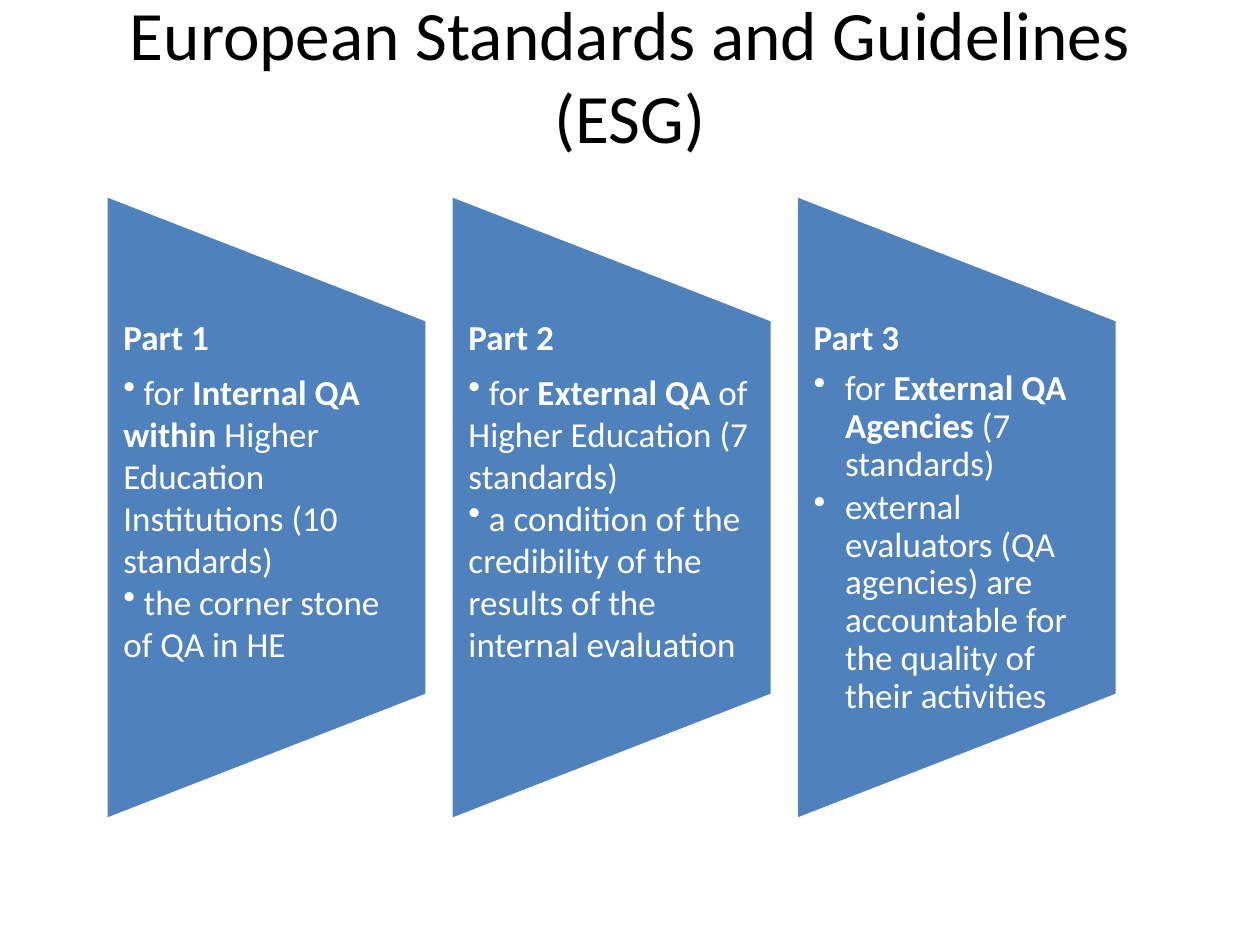
import dataclasses

import lxml.etree
import pptx
import pptx.dml.color
import pptx.enum.shapes
import pptx.enum.text
import pptx.oxml.ns
import pptx.util

Pt = pptx.util.Pt
Align = pptx.enum.text.PP_ALIGN
Anchor = pptx.enum.text.MSO_ANCHOR
COLORS = {"ink": "000000", "panel": "4F81BD", "paper": "FFFFFF"}
FONT = "Calibri"

LEFT, MID, STEP = 60.5, 290, 197.2
WIDE, TALL = 183.6, 357.1
BODY = 213.8


@dataclasses.dataclass
class Part:
    """A panel; in each point, every second piece between * marks is bold."""
    title: str
    points: list[str]
    hang: bool = False


PARTS = [
    Part("Part 1", [
        " for *Internal QA within *Higher Education Institutions (10 standards)",
        " the corner stone of QA in HE",
    ]),
    Part("Part 2", [
        " for *External QA *of Higher Education (7 standards)",
        " a condition of the credibility of the results of the internal evaluation",
    ]),
    Part("Part 3", [
        "for *External QA Agencies *(7 standards)",
        "external evaluators (QA agencies) are accountable for "
        "the quality of their activities",
    ], hang=True),
]


def rgb(name: str) -> pptx.dml.color.RGBColor:
    return pptx.dml.color.RGBColor.from_string(COLORS[name])


def add_box(slide, left: float, top: float, width: float, height: float,
            *, inset: tuple, anchor=Anchor.TOP):
    box = slide.shapes.add_textbox(Pt(left), Pt(top), Pt(width), Pt(height))
    frame = box.text_frame
    frame.word_wrap = True
    frame.vertical_anchor = anchor
    (frame.margin_left, frame.margin_top,
     frame.margin_right, frame.margin_bottom) = map(Pt, inset)
    return frame


def write(para, text: str, *, size: float = 20, color: str = "paper",
          align=Align.LEFT, line: float = 1.0, after: float = 0,
          bold: bool = False) -> None:
    """Fill a paragraph, switching bold at each * mark."""
    para.alignment = align
    para.line_spacing = line
    para.space_before, para.space_after = Pt(0), Pt(after)
    for index, piece in enumerate(text.split("*")):
        run = para.add_run()
        run.text = piece
        run.font.name = FONT
        run.font.size = Pt(size)
        run.font.bold = bold or index % 2 == 1
        run.font.color.rgb = rgb(color)


def add_bullet(para, indent: float) -> None:
    props = para._p.get_or_add_pPr()
    props.set("marL", str(Pt(indent)))
    props.set("indent", str(Pt(-indent)))
    bullet = lxml.etree.SubElement(props, pptx.oxml.ns.qn("a:buChar"))
    bullet.set("char", "•")


def add_panel(slide, left: float) -> None:
    """Draw a trapezoid, turned so that its long side is on the left."""
    shape = slide.shapes.add_shape(
        pptx.enum.shapes.MSO_SHAPE.FLOWCHART_MANUAL_OPERATION,
        Pt(left + (WIDE - TALL) / 2), Pt(MID - WIDE / 2), Pt(TALL), Pt(WIDE))
    shape.rotation = 270
    shape.shadow.inherit = False
    shape.fill.solid()
    shape.fill.fore_color.rgb = rgb("panel")
    shape.line.color.rgb = rgb("paper")
    shape.line.width = Pt(2)


def add_part(slide, part: Part, left: float) -> None:
    add_panel(slide, left)
    frame = add_box(slide, left, MID - BODY / 2, WIDE, BODY,
                    inset=(10, 0, 10, 0))
    write(frame.paragraphs[0], part.title, line=0.9, after=7, bold=True)
    for point in part.points:
        para = frame.add_paragraph()
        if part.hang:
            write(para, point, line=0.9, after=3)
        else:
            write(para, point)
        add_bullet(para, 18 if part.hang else 0)


def main() -> None:
    deck = pptx.Presentation()
    deck.slide_width, deck.slide_height = Pt(720), Pt(540)
    slide = deck.slides.add_slide(deck.slide_layouts[6])
    title = add_box(slide, 36, 21.6, 648, 90, inset=(7.2, 0, 7.2, 48),
                    anchor=Anchor.MIDDLE)
    write(title.paragraphs[0], "European Standards and Guidelines (ESG)",
          size=39.6, color="ink", align=Align.CENTER)
    for index, part in enumerate(PARTS):
        add_part(slide, part, LEFT + index * STEP)
    deck.save("out.pptx")


if __name__ == "__main__":
    main()
